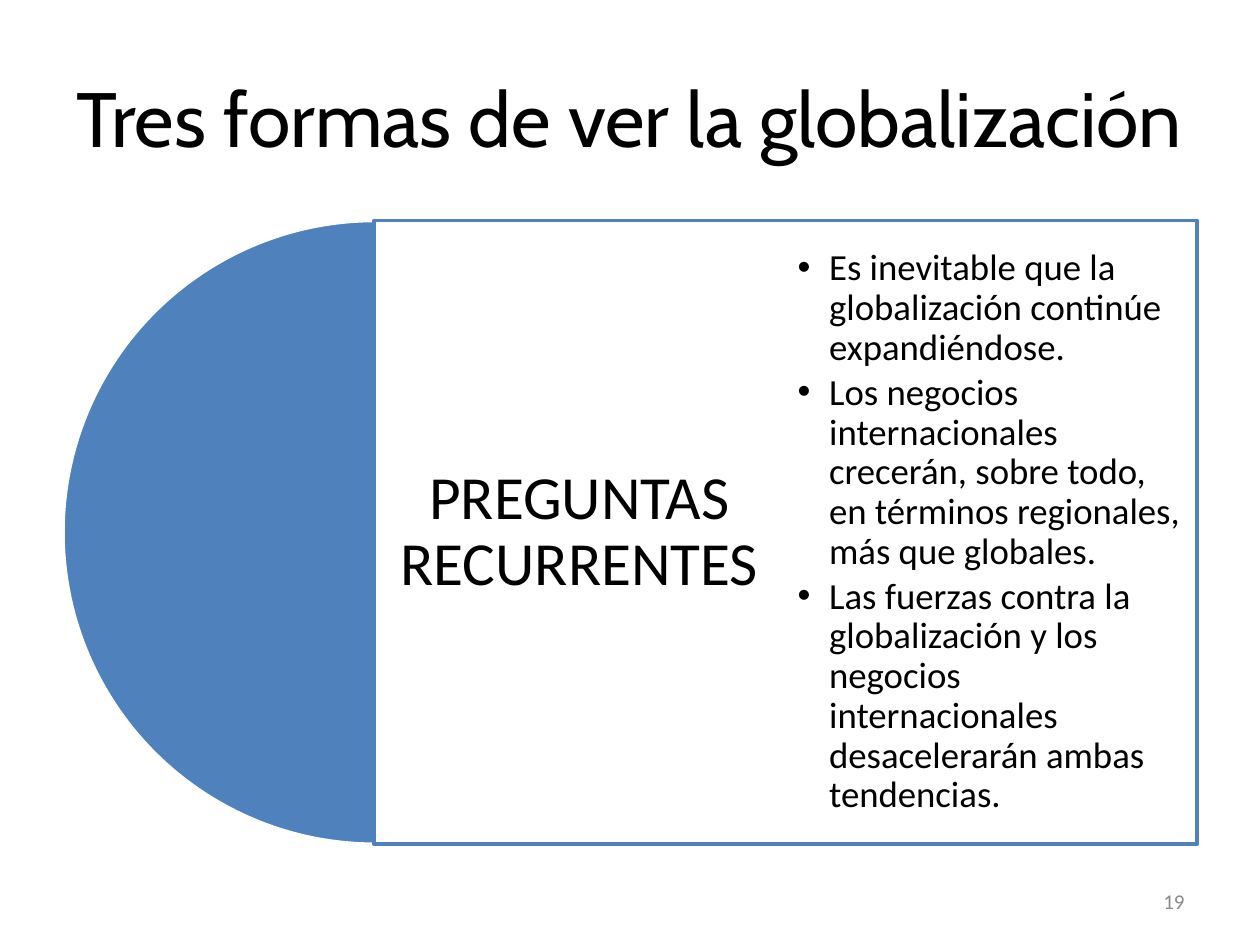
from dataclasses import dataclass

from lxml.etree import SubElement
from pptx import Presentation
from pptx.dml.color import RGBColor
from pptx.enum.shapes import MSO_SHAPE
from pptx.enum.text import MSO_ANCHOR, MSO_AUTO_SIZE, PP_ALIGN
from pptx.oxml.ns import qn
from pptx.util import Inches, Pt


@dataclass(frozen=True)
class Theme:
    """Colours, fonts and type sizes of the slide."""
    blue: RGBColor = RGBColor(0x4F, 0x81, 0xBD)
    white: RGBColor = RGBColor(0xFF, 0xFF, 0xFF)
    black: RGBColor = RGBColor(0, 0, 0)
    grey: RGBColor = RGBColor(0x89, 0x89, 0x89)
    title_font: str = "Cabin"
    text_font: str = "Calibri"
    title_size: float = 44
    heading_size: float = 35
    bullet_size: float = 21
    number_size: float = 12
    outline: float = 2


@dataclass(frozen=True)
class Box:
    """A rectangular area in inches."""
    left: float
    top: float
    width: float
    height: float

    def emu(self) -> tuple:
        """Return the area as lengths."""
        return tuple(Inches(n) for n in (self.left, self.top, self.width, self.height))


THEME = Theme()
TITLE = Box(0.5, 0.3, 9, 1.25)
DISC = Box(0.5, 1.75, 4.95, 4.95)
PANEL = Box(2.97, 1.75, 6.53, 4.95)
HEADING = Box(2.97, 1.75, 3.26, 4.95)
BULLETS = Box(6.24, 1.75, 3.26, 4.95)
PAGE_NUMBER = Box(7.17, 6.95, 2.33, 0.4)
QUESTIONS = (
    "Es inevitable que la globalización continúe expandiéndose.",
    "Los negocios internacionales crecerán, sobre todo, en términos regionales, más que globales.",
    "Las fuerzas contra la globalización y los negocios internacionales desacelerarán ambas tendencias.",
)


def place(shape, box: Box) -> None:
    """Move a shape to an area."""
    shape.left, shape.top, shape.width, shape.height = box.emu()


def setup_frame(frame, inset: float | None = None) -> None:
    """Wrap and centre a frame vertically, with an optional inset."""
    frame.word_wrap = True
    frame.auto_size = MSO_AUTO_SIZE.NONE
    frame.vertical_anchor = MSO_ANCHOR.MIDDLE
    if inset is not None:
        frame.margin_left = frame.margin_right = Inches(inset)
        frame.margin_top = frame.margin_bottom = Inches(inset)


def style(paragraph, size: float, align: PP_ALIGN, color: RGBColor = THEME.black,
          font: str = THEME.text_font) -> None:
    """Set the font and alignment of a paragraph."""
    paragraph.alignment = align
    paragraph.font.size = Pt(size)
    paragraph.font.name = font
    paragraph.font.color.rgb = color


def add_block(slide, kind: MSO_SHAPE, box: Box, fill: RGBColor, line: RGBColor):
    """Add a filled and outlined preset shape."""
    block = slide.shapes.add_shape(kind, *box.emu())
    block.shadow.inherit = False
    block.fill.solid()
    block.fill.fore_color.rgb = fill
    block.line.color.rgb = line
    block.line.width = Pt(THEME.outline)
    return block


def add_label(slide, box: Box, text: str, size: float, align: PP_ALIGN,
              color: RGBColor, inset: float | None = None):
    """Add a one-paragraph text box and return its paragraph."""
    frame = slide.shapes.add_textbox(*box.emu()).text_frame
    setup_frame(frame, inset)
    frame.text = text
    style(frame.paragraphs[0], size, align, color)
    return frame.paragraphs[0]


def fill_bullets(body, questions: tuple[str, ...]) -> None:
    """Write the questions as a bulleted list."""
    frame = body.text_frame
    setup_frame(frame, 0.09)
    frame.text = "\n".join(questions)
    for question in frame.paragraphs:
        style(question, THEME.bullet_size, PP_ALIGN.LEFT)
        question.level = 1
        question.line_spacing = 0.9
        question.space_before = Pt(0)
        question.space_after = Pt(0.15 * THEME.bullet_size)
        properties = question._p.get_or_add_pPr()
        properties.set("marL", str(Inches(0.25)))
        properties.set("indent", str(Inches(-0.25)))
        bullet = properties.makeelement(qn("a:buChar"), {"char": "•"})
        properties.insert_element_before(bullet, "a:tabLst", "a:defRPr", "a:extLst")


def main() -> None:
    """Build and save the slide."""
    deck = Presentation()
    deck.slide_width, deck.slide_height = Inches(10), Inches(7.5)
    slide = deck.slides.add_slide(deck.slide_layouts[1])
    title, body = slide.placeholders

    place(title, TITLE)
    setup_frame(title.text_frame)
    title.text_frame.text = "Tres formas de ver la globalización"
    style(title.text_frame.paragraphs[0], THEME.title_size, PP_ALIGN.CENTER,
          font=THEME.title_font)

    add_label(slide, PAGE_NUMBER, "19", THEME.number_size, PP_ALIGN.RIGHT, THEME.grey)

    half_disc = add_block(slide, MSO_SHAPE.PIE, DISC, THEME.blue, THEME.white)
    half_disc.adjustments[0] = 54
    half_disc.adjustments[1] = 162
    panel = add_block(slide, MSO_SHAPE.RECTANGLE, PANEL, THEME.white, THEME.blue)
    panel_color = panel.element.spPr.find(qn("a:solidFill")).find(qn("a:srgbClr"))
    SubElement(panel_color, qn("a:alpha"), val="90000")

    heading = add_label(slide, HEADING, "PREGUNTAS RECURRENTES", THEME.heading_size,
                        PP_ALIGN.CENTER, THEME.black, 0.15)
    heading.line_spacing = 0.9

    place(body, BULLETS)
    fill_bullets(body, QUESTIONS)
    slide.shapes.element.append(body.element)
    deck.save("out.pptx")


if __name__ == "__main__":
    main()
